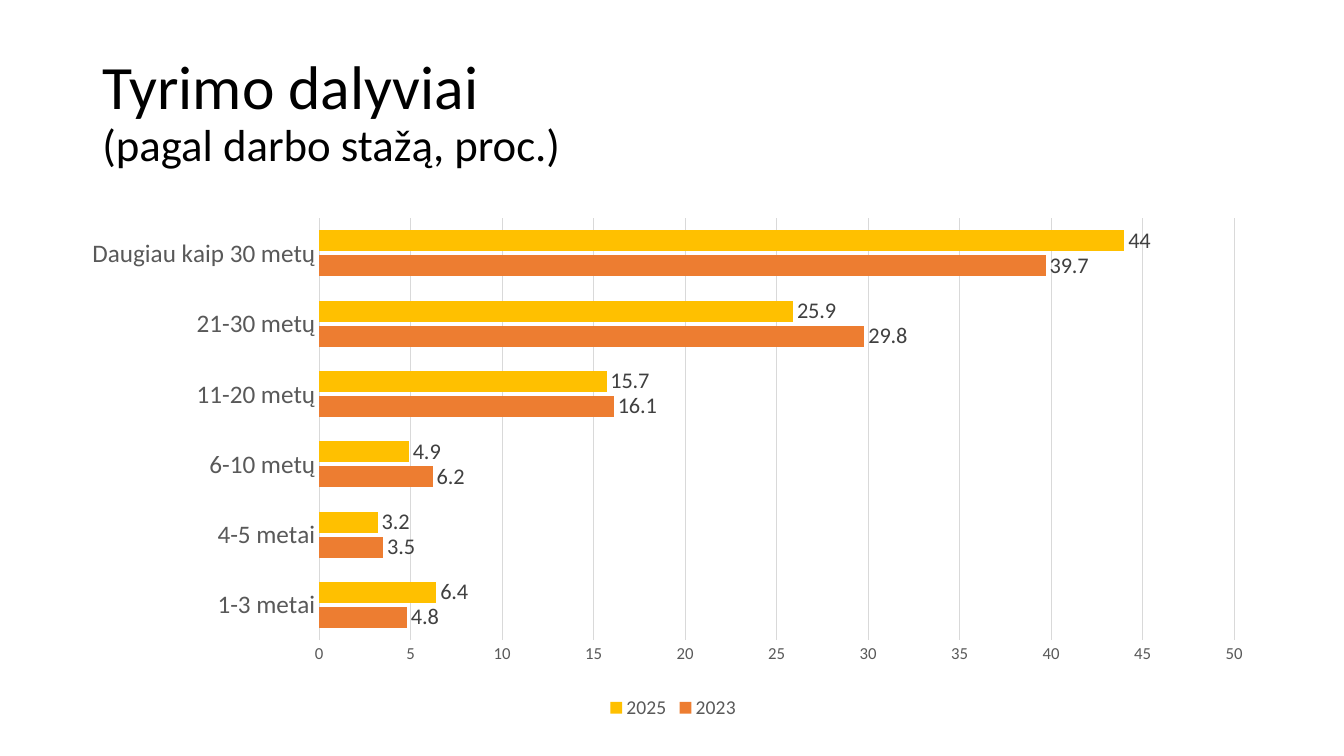
from pptx import Presentation
from pptx.chart.data import CategoryChartData
from pptx.dml.color import RGBColor
from pptx.enum.chart import XL_CHART_TYPE as Kind
from pptx.enum.chart import XL_LABEL_POSITION as Spot
from pptx.enum.chart import XL_LEGEND_POSITION as Side
from pptx.enum.chart import XL_TICK_MARK as Tick
from pptx.enum.text import MSO_ANCHOR as Anchor
from pptx.oxml import parse_xml
from pptx.oxml.ns import nsdecls, qn
from pptx.util import Pt

FACE = "Calibri"
GREY, PALE = "595959", "D9D9D9"
TERMS = ["1-3 metai", "4-5 metai", "6-10 metų", "11-20 metų",
         "21-30 metų", "Daugiau kaip 30 metų"]
YEARS = [
    ("2023", "ED7D31", [4.8, 3.5, 6.2, 16.1, 29.8, 39.7]),
    ("2025", "FFC000", [6.4, 3.2, 4.9, 15.7, 25.9, 44]),
]


def rgb(code):
    return RGBColor.from_string(code)


def style(font, size, color):
    font.name = FACE
    font.size = Pt(size)
    font.color.rgb = rgb(color)


def add_text(slide, box, lines, color="000000", space=1, anchor=Anchor.TOP):
    """Write (text, size) lines as one paragraph with line breaks."""
    frame = slide.shapes.add_textbox(*map(Pt, box)).text_frame
    frame.word_wrap = True
    frame.vertical_anchor = anchor
    para = frame.paragraphs[0]
    para.line_spacing = space
    for i, (text, size) in enumerate(lines):
        if i:
            para.add_line_break()
        run = para.add_run()
        run.text = text
        style(run.font, size, color)


def set_plot(chart, **parts):
    """Fix the inner plot area as fractions of the chart."""
    area = chart.plots[0]._element.getparent()
    for old in area.findall(qn("c:layout")):
        area.remove(old)
    sizes = "".join(f'<c:{key} val="{val}"/>' for key, val in parts.items())
    area.insert(0, parse_xml(
        f'<c:layout {nsdecls("c")}><c:manualLayout>'
        '<c:layoutTarget val="inner"/><c:xMode val="edge"/>'
        f'<c:yMode val="edge"/>{sizes}</c:manualLayout></c:layout>'))


def style_axis(axis, size):
    axis.major_tick_mark = axis.minor_tick_mark = Tick.NONE
    style(axis.tick_labels.font, size, GREY)


def add_bars(slide, box):
    data = CategoryChartData()
    data.categories = TERMS
    for year, _, vals in YEARS:
        data.add_series(year, vals)
    chart = slide.shapes.add_chart(
        Kind.BAR_CLUSTERED, *map(Pt, box), data).chart
    chart.has_title = False
    style(chart.font, 10, "000000")
    set_plot(chart, x=0.194, y=0.032, w=0.791, h=0.808)

    plot = chart.plots[0]
    plot.gap_width, plot.overlap = 115, -20
    plot.vary_by_categories = False
    for bars, (_, color, _) in zip(plot.series, YEARS):
        bars.format.fill.solid()
        bars.format.fill.fore_color.rgb = rgb(color)
        labels = bars.data_labels
        labels.show_value = True
        labels.position = Spot.OUTSIDE_END
        style(labels.font, 16, "404040")

    terms, scale = chart.category_axis, chart.value_axis
    style_axis(terms, 18)
    style_axis(scale, 12)
    scale.minimum_scale, scale.maximum_scale, scale.major_unit = 0, 50, 5
    scale.format.line.fill.background()
    scale.has_major_gridlines = True
    for part, width in ((terms, 1), (scale.major_gridlines, 0.75)):
        part.format.line.color.rgb = rgb(PALE)
        part.format.line.width = Pt(width)

    chart.has_legend = True
    chart.legend.position = Side.BOTTOM
    chart.legend.include_in_layout = False
    style(chart.legend.font, 14, GREY)


def main():
    deck = Presentation()
    deck.slide_width, deck.slide_height = Pt(960), Pt(540)
    slide = deck.slides.add_slide(deck.slide_layouts[6])
    add_text(slide, (66, 29, 790, 104),
             [("Tyrimo dalyviai", 44), ("(pagal darbo stažą, proc.)", 32)],
             space=0.9, anchor=Anchor.MIDDLE)
    add_bars(slide, (66, 144, 828, 373))
    deck.save("out.pptx")


if __name__ == "__main__":
    main()
